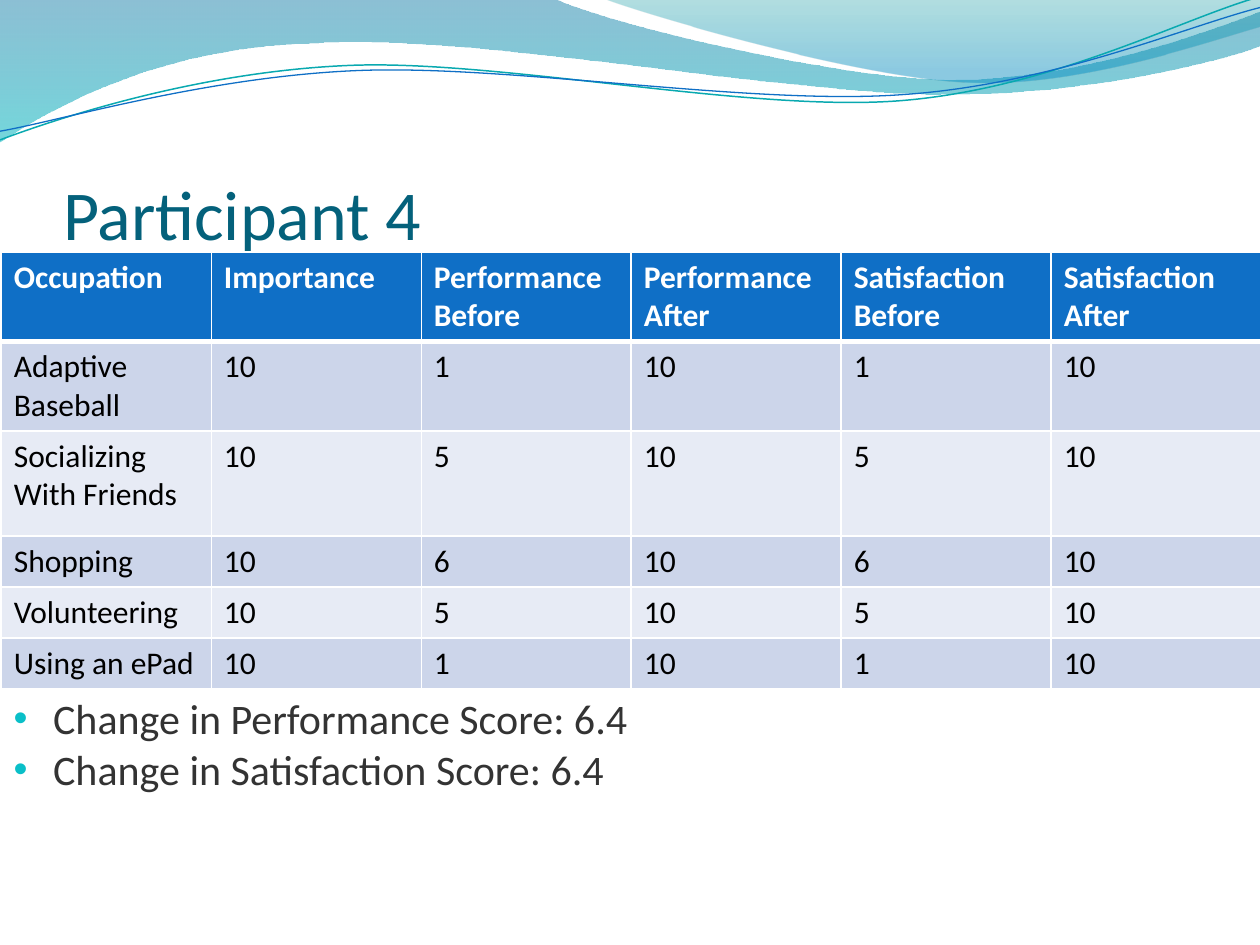
from lxml import etree
from pptx import Presentation
from pptx import util as u
from pptx.dml.color import RGBColor
from pptx.enum import text
from pptx.oxml import ns

FONT = "Calibri"
WHITE, BLUE = "FFFFFF", "0F6FC6"
BANDS = ("CCD5EA", "E7EBF5")

# Each outline is a start point, then line ends (2 numbers) or Bezier curves (6 numbers).
LEFT_WAVE = [
    (0, 0), (316.8, -0.7),
    (342.7, 12.2, 478.1, 45.4, 545.8, 45.4), (614.2, 45.4, 689.8, 18.7, 720, 6.5),
    (720.7, 25.9),
    (707.8, 31.7, 626.4, 54.7, 537.1, 54), (447.8, 54, 275, 20.2, 185, 24.5),
    (92.9, 25.9, 33.1, 59.8, -0.7, 81.4), (0, 0),
]
RIGHT_WAVE = [
    (344.9, -0.7),
    (366.5, 7.9, 491, 44.6, 553.7, 46.8), (616.3, 49.7, 691.9, 23, 720, 15.1),
    (720, 0), (344.9, -0.7),
]
TEAL_STRAND = [
    (-1.4, 63),
    (33.8, 51.7, 114.1, 29.4, 199.8, 29.9), (284.9, 30.3, 425.8, 67.3, 512.4, 64.9),
    (599, 62.4, 676.5, 25.7, 720.2, 15.5),
]
BLUE_STRAND = [
    (-1.1, 58),
    (32.9, 53.8, 118.3, 32.5, 204.1, 33), (290.6, 33.4, 428.9, 63.8, 515.5, 61.4),
    (601.3, 59.6, 678.5, 30.1, 721.4, 21.3),
]
STRAND_TURN = 357.3

HEADINGS = ["Occupation", "Importance", "Performance Before", "Performance After",
            "Satisfaction Before", "Satisfaction After"]
SCORES = [
    ["Adaptive Baseball", 10, 1, 10, 1, 10],
    ["Socializing With Friends", 10, 5, 10, 5, 10],
    ["Shopping", 10, 6, 10, 6, 10],
    ["Volunteering", 10, 5, 10, 5, 10],
    ["Using an ePad", 10, 1, 10, 1, 10],
]
ROW_HEIGHTS = [29.2, 29.2, 59.9, 29.2, 29.2, 29.2]
CHANGES = ["Change in Performance Score: 6.4", "Change in Satisfaction Score: 6.4"]


def rgb(value):
    return RGBColor.from_string(value)


def add_xml(parent, tag, **attributes):
    return etree.SubElement(parent, ns.qn(tag), attributes)


def style_font(para, size, color, bold=False):
    font = para.font
    font.name, font.size, font.bold = FONT, u.Pt(size), bold
    font.color.rgb = rgb(color)


def add_outline(slide, outline, close):
    """Build the outline through all its points, then turn point triples into curves."""
    segments = [[(u.Pt(x), u.Pt(y)) for x, y in zip(part[::2], part[1::2])]
                for part in outline]
    builder = slide.shapes.build_freeform(*segments[0][0])
    for points in segments[1:]:
        builder.add_line_segments(points, close=False)
    shape = builder.convert_to_shape()
    shape.shadow.inherit = False

    track = next(shape.element.iter(ns.qn("a:path")))
    lines = iter(track.findall(ns.qn("a:lnTo")))
    for points in segments[1:]:
        parts = [next(lines) for _ in points]
        if len(parts) == 3:
            curve = etree.Element(ns.qn("a:cubicBezTo"))
            parts[0].addprevious(curve)
            for part in parts:
                curve.append(part[0])
                track.remove(part)
    if close:
        add_xml(track, "a:close")
    return shape


def add_wave(slide, outline, stops):
    """Stops are (position, colour, opacity percent), from top to bottom."""
    wave = add_outline(slide, outline, close=True)
    wave.line.fill.background()
    wave.fill.gradient()
    wave.fill.gradient_angle = 270
    for stop, (position, color, _) in zip(wave.fill.gradient_stops, stops):
        stop.position = position
        stop.color.rgb = rgb(color)
    colors = wave.element.spPr.find(ns.qn("a:gradFill")).iter(ns.qn("a:srgbClr"))
    for element, (_, _, opacity) in zip(colors, stops):
        add_xml(element, "a:alpha", val=str(opacity * 1000))


def add_strand(slide, outline, color, width):
    strand = add_outline(slide, outline, close=False)
    strand.rotation = STRAND_TURN
    strand.fill.background()
    strand.line.color.rgb = rgb(color)
    strand.line.width = u.Pt(width)


def set_title(slide, wording):
    title = slide.shapes.title
    title.left, title.top, title.width, title.height = map(u.Pt, (36, 55.4, 648, 90))
    frame = title.text_frame
    frame.text = wording
    frame.vertical_anchor = text.MSO_ANCHOR.BOTTOM
    frame.margin_left = frame.margin_right = frame.margin_bottom = 0
    frame.margin_top = u.Pt(3.6)
    para = frame.paragraphs[0]
    para.alignment = text.PP_ALIGN.LEFT
    style_font(para, 40, "04617B")


def border_cell(cell, bottom):
    properties = cell._tc.get_or_add_tcPr()
    for side, width in zip("LRTB", (1, 1, 1, bottom)):
        line = add_xml(properties, f"a:ln{side}", w=str(u.Pt(width)))
        add_xml(add_xml(line, "a:solidFill"), "a:srgbClr", val=WHITE)


def add_score_table(slide):
    rows = [HEADINGS] + SCORES
    height = u.Pt(248.4)
    frame = slide.shapes.add_table(len(rows), len(HEADINGS), u.Pt(0.75), u.Pt(144),
                                   u.Pt(720), height)
    table = frame.table
    for row, row_height in zip(table.rows, ROW_HEIGHTS):
        row.height = u.Pt(row_height)
    frame.height = height
    for r, values in enumerate(rows):
        header = r == 0
        for c, value in enumerate(values):
            cell = table.cell(r, c)
            cell.text = str(value)
            border_cell(cell, bottom=3 if header else 1)
            cell.fill.solid()
            cell.fill.fore_color.rgb = rgb(BLUE if header else BANDS[(r - 1) % 2])
            style_font(cell.text_frame.paragraphs[0], 18,
                       WHITE if header else "000000", bold=header)


def add_bullet(para):
    properties = para._p.get_or_add_pPr()
    properties.set("marL", str(u.Pt(22.5)))
    properties.set("indent", str(u.Pt(-22.5)))
    color = etree.Element(ns.qn("a:buClr"))
    add_xml(color, "a:srgbClr", val="0ABFC8")
    size = etree.Element(ns.qn("a:buSzPct"), val="95000")
    font = etree.Element(ns.qn("a:buFont"), typeface="Arial")
    mark = etree.Element(ns.qn("a:buChar"), char="•")
    for index, element in enumerate((color, size, font, mark)):
        properties.insert(index, element)


def add_changes(slide, lines):
    box = slide.shapes.add_textbox(u.Pt(0.75), u.Pt(392.4), u.Pt(687.6), u.Pt(65.5))
    frame = box.text_frame
    frame.word_wrap = True
    frame.auto_size = text.MSO_AUTO_SIZE.SHAPE_TO_FIT_TEXT
    frame.text = "\n".join(lines)
    for para in frame.paragraphs:
        style_font(para, 24, "333333")
        add_bullet(para)


def main():
    deck = Presentation()
    deck.slide_width, deck.slide_height = u.Pt(720), u.Pt(540)
    slide = deck.slides.add_slide(deck.slide_layouts[5])
    add_wave(slide, LEFT_WAVE, [(0, "0074A1", 45), (1, "00B6BF", 55)])
    add_wave(slide, RIGHT_WAVE, [(0, "00949B", 30), (0.8, "008BBF", 45)])
    add_strand(slide, TEAL_STRAND, "09A9B0", 0.85)
    add_strand(slide, BLUE_STRAND, BLUE, 0.75)
    set_title(slide, "Participant 4")
    add_score_table(slide)
    add_changes(slide, CHANGES)
    deck.save("out.pptx")


if __name__ == "__main__":
    main()
